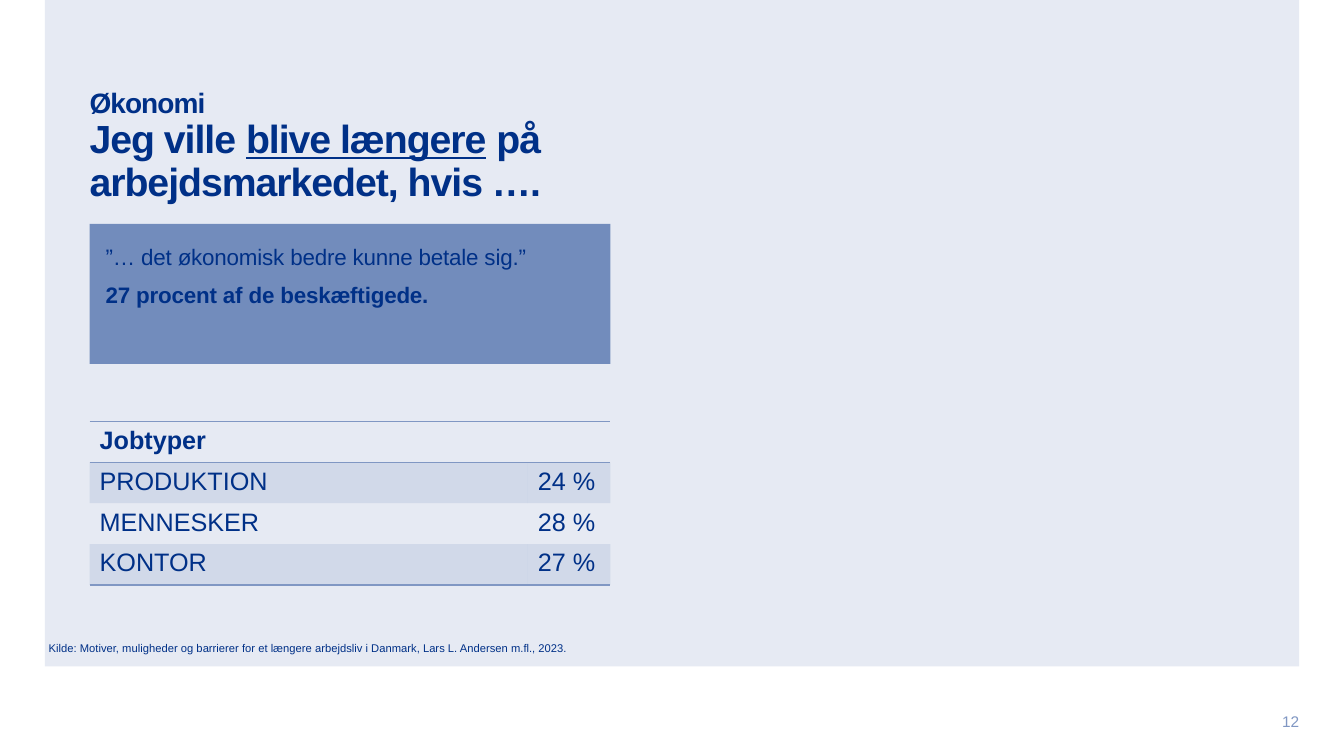
from lxml import etree
from pptx import Presentation
from pptx.dml.color import RGBColor
from pptx.enum import shapes, text
from pptx.oxml.ns import qn
from pptx.util import Pt

NAVY = RGBColor(0x00, 0x30, 0x87)
MUTED = RGBColor(0x80, 0x97, 0xC3)
PALE = RGBColor(0xE6, 0xEA, 0xF3)
NO_STYLE = "{2D5ABB26-0587-4C30-8999-92F81FD0307C}"

LEFT, COLUMN_WIDTH = 64, 372
JOB_TYPES = [("Jobtyper", ""), ("PRODUKTION", "24 %"),
             ("MENNESKER", "28 %"), ("KONTOR", "27 %")]
SOURCE = ("Kilde: Motiver, muligheder og barrierer for et længere arbejdsliv "
          "i Danmark, Lars L. Andersen m.fl., 2023.")


def apply(target, **values):
    for name, value in values.items():
        setattr(target, name, value)


def set_font(font, size, color=NAVY, **extra):
    apply(font, name="Arial", size=Pt(size), **extra)
    font.color.rgb = color


def add_run(paragraph, words, size, color=NAVY, spacing=0, **extra):
    """Add a run; spacing is the letter spacing in points."""
    run = paragraph.add_run()
    run.text = words
    set_font(run.font, size, color, **extra)
    if spacing:
        run._r.get_or_add_rPr().set("spc", str(round(spacing * 100)))


def set_frame(frame, margin=0, anchor=text.MSO_ANCHOR.TOP):
    apply(frame, word_wrap=True, auto_size=text.MSO_AUTO_SIZE.NONE,
          vertical_anchor=anchor)
    for side in ("left", "top", "right", "bottom"):
        setattr(frame, f"margin_{side}", Pt(margin))


def fill_solid(fill, color, opacity=100):
    fill.solid()
    fill.fore_color.rgb = color
    if opacity < 100:
        tint = fill._xPr.find(qn("a:solidFill"))[0]
        etree.SubElement(tint, qn("a:alpha"), val=str(opacity * 1000))


def add_panel(slide, box, color, opacity=100):
    panel = slide.shapes.add_shape(shapes.MSO_SHAPE.RECTANGLE, *map(Pt, box))
    panel.shadow.inherit = False
    panel.line.fill.background()
    fill_solid(panel.fill, color, opacity)
    return panel


def add_backdrop(slide, box):
    """Place the pale panel behind the title."""
    backdrop = add_panel(slide, box, PALE)
    slide.shapes._spTree.insert(2, backdrop._element)


def add_title(slide, box):
    title = slide.shapes.title
    apply(title, **dict(zip(("left", "top", "width", "height"), map(Pt, box))))
    set_frame(title.text_frame)
    heading = title.text_frame.paragraphs[0]
    apply(heading, alignment=text.PP_ALIGN.LEFT, line_spacing=0.9,
          space_before=Pt(0))
    bold = {"bold": True, "spacing": -0.7}
    add_run(heading, "Økonomi", 20, **bold)
    heading.add_line_break()
    add_run(heading, "Jeg ville ", 28, **bold)
    add_run(heading, "blive længere", 28, underline=True, **bold)
    add_run(heading, " på ", 28, **bold)
    heading.add_line_break()
    add_run(heading, "arbejdsmarkedet, hvis ….", 28, **bold)


def add_quote(slide, box):
    frame = add_panel(slide, box, NAVY, 50).text_frame
    set_frame(frame, margin=11.5)
    quote, share = frame.paragraphs[0], frame.add_paragraph()
    for paragraph in (quote, share):
        apply(paragraph, alignment=text.PP_ALIGN.LEFT, line_spacing=1.1,
              space_after=Pt(6))
    add_run(quote, "”… det økonomisk bedre kunne betale sig.”", 16,
            spacing=-0.1)
    add_run(share, "27 procent af de beskæftigede.", 16, spacing=-0.1,
            bold=True)


def add_border(cell, side):
    border = etree.SubElement(cell._tc.get_or_add_tcPr(), qn(f"a:ln{side}"),
                              w=str(Pt(1)))
    paint = etree.SubElement(border, qn("a:solidFill"))
    etree.SubElement(paint, qn("a:srgbClr"), val=str(MUTED))


def add_job_types(slide, box):
    left, top, width, height = box
    job_table = slide.shapes.add_table(len(JOB_TYPES), 2, *map(Pt, box)).table
    job_table._tbl.tblPr.find(qn("a:tableStyleId")).text = NO_STYLE
    share_width = 59
    job_table.columns[0].width = Pt(width - share_width)
    job_table.columns[1].width = Pt(share_width)
    last = len(JOB_TYPES) - 1
    for row, entries in enumerate(JOB_TYPES):
        for column, words in enumerate(entries):
            cell = job_table.cell(row, column)
            cell.text = words
            set_font(cell.text_frame.paragraphs[0].font, 18, bold=row == 0)
            for side in {0: "TB", last: "B"}.get(row, ""):
                add_border(cell, side)
            if row % 2:
                fill_solid(cell.fill, MUTED, 20)
            else:
                cell.fill.background()


def add_note(slide, box, words, size, color=NAVY, anchor=text.MSO_ANCHOR.TOP,
             **layout):
    frame = slide.shapes.add_textbox(*map(Pt, box)).text_frame
    set_frame(frame, anchor=anchor)
    apply(frame.paragraphs[0], **layout)
    add_run(frame.paragraphs[0], words, size, color)


def build_economy_slide(deck):
    slide = deck.slides.add_slide(deck.slide_layouts[5])
    add_backdrop(slide, (32, 0, 896, 476))
    add_title(slide, (LEFT, 64, 832, 63.5))
    add_quote(slide, (LEFT, 160, COLUMN_WIDTH, 100))
    add_job_types(slide, (LEFT, 301, COLUMN_WIDTH, 116.8))
    add_note(slide, (34.75, 458, 413, 15), SOURCE, 8, line_spacing=1.04,
             space_after=Pt(3))
    add_note(slide, (896, 510, 32, 10), "12", 11, MUTED,
             text.MSO_ANCHOR.MIDDLE, alignment=text.PP_ALIGN.RIGHT)


def main():
    deck = Presentation()
    apply(deck, slide_width=Pt(960), slide_height=Pt(540))
    build_economy_slide(deck)
    deck.save("out.pptx")


if __name__ == "__main__":
    main()
